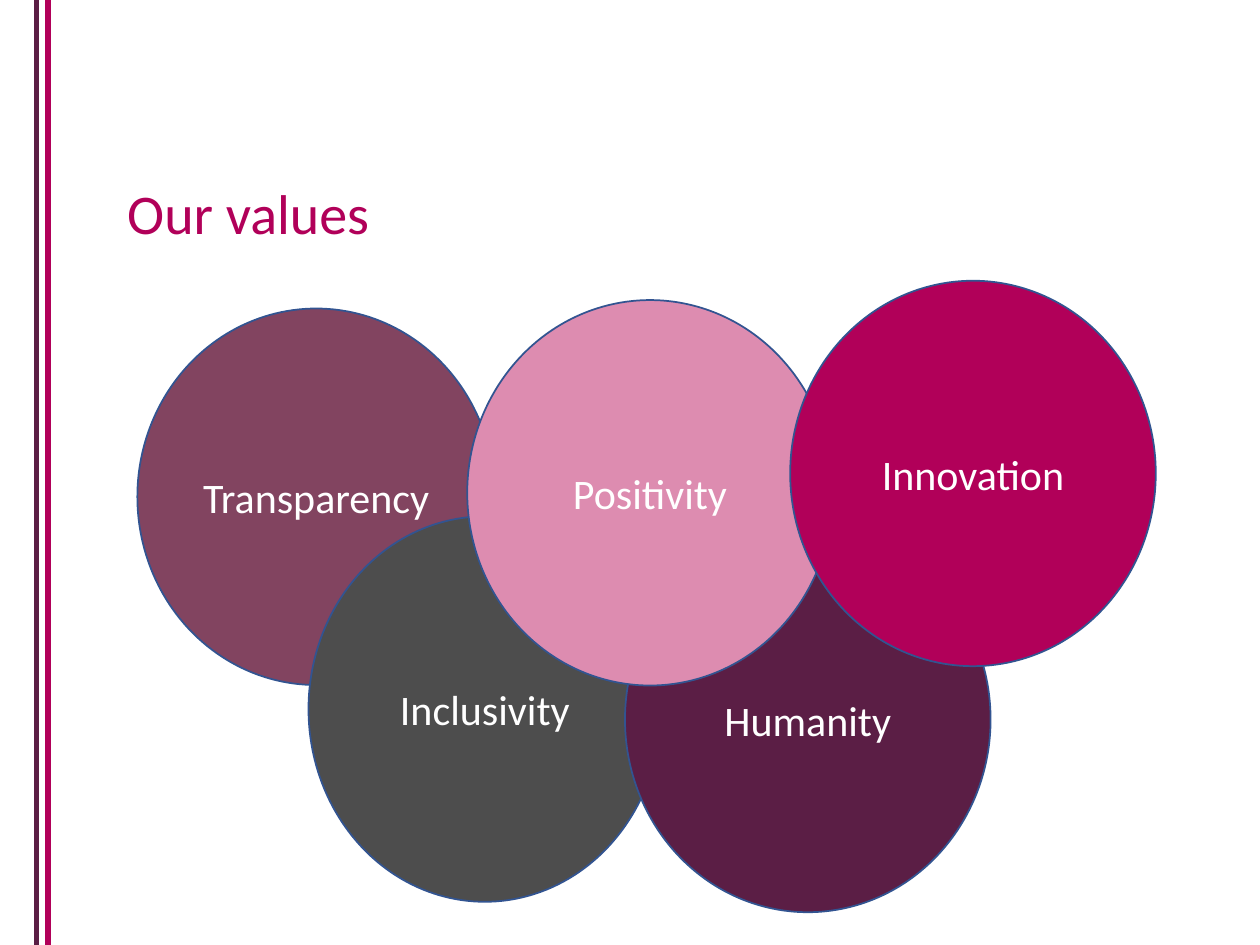
from dataclasses import dataclass

from lxml import etree
from pptx import Presentation
from pptx.dml.color import RGBColor
from pptx.enum.shapes import MSO_CONNECTOR, MSO_SHAPE
from pptx.enum.text import MSO_ANCHOR, MSO_AUTO_SIZE, PP_ALIGN
from pptx.oxml.ns import qn
from pptx.util import Cm, Pt

STRAIGHT = MSO_CONNECTOR.STRAIGHT
OVAL = MSO_SHAPE.OVAL
TOP, MIDDLE = MSO_ANCHOR.TOP, MSO_ANCHOR.MIDDLE
LEFT, CENTER = PP_ALIGN.LEFT, PP_ALIGN.CENTER
NO_AUTOFIT = MSO_AUTO_SIZE.NONE

WIDTH, HEIGHT = 25.4, 19.05
PLUM, MAGENTA, OUTLINE, WHITE = "5B1E45", "B10059", "325491", "FFFFFF"


@dataclass
class Stripe:
    x: float
    color: str


@dataclass
class Value:
    name: str
    left: float
    top: float
    fill: str
    width: float = 7.37
    height: float = 7.77


STRIPES = [Stripe(0.74, PLUM), Stripe(0.97, MAGENTA)]

# Back to front, lengths in centimetres
VALUES = [
    Value("Transparency", 2.77, 6.22, "824460", 7.21, 7.59),
    Value("Inclusivity", 6.22, 10.41, "4D4D4D", 7.11),
    Value("Humanity", 12.6, 10.62, PLUM),
    Value("Positivity", 9.42, 6.05, "DD8CB0"),
    Value("Innovation", 15.93, 5.66, MAGENTA),
]


def rgb(color: str) -> RGBColor:
    return RGBColor.from_string(color)


def write_text(tf, text: str, size: int, color: str, align, frame: dict) -> None:
    for name, value in frame.items():
        setattr(tf, name, value)
    p = tf.paragraphs[0]
    p.alignment = align
    r = p.add_run()
    r.text = text
    for name, value in {"name": "Calibri", "size": Pt(size)}.items():
        setattr(r.font, name, value)
    r.font.color.rgb = rgb(color)


def draw_stripe(shapes, stripe: Stripe) -> None:
    x = Cm(stripe.x)
    line = shapes.add_connector(STRAIGHT, x, 0, x, Cm(HEIGHT))
    line.line.color.rgb = rgb(stripe.color)
    line.line.width = Pt(3)
    etree.SubElement(line._element.spPr, qn("a:effectLst"))


def draw_value(shapes, value: Value) -> None:
    sp = shapes.add_shape(OVAL, Cm(value.left), Cm(value.top),
                          Cm(value.width), Cm(value.height))
    sp.shadow.inherit = False
    sp.fill.solid()
    sp.fill.fore_color.rgb = rgb(value.fill)
    sp.line.color.rgb = rgb(OUTLINE)
    sp.line.width = Pt(1)
    write_text(sp.text_frame, value.name, 24, WHITE, CENTER,
               {"vertical_anchor": MIDDLE, "word_wrap": False})


def main() -> None:
    prs = Presentation()
    prs.slide_width, prs.slide_height = Cm(WIDTH), Cm(HEIGHT)
    s = prs.slides.add_slide(prs.slide_layouts[5])

    # Title
    title = s.shapes.title
    box = {"left": 2.31, "top": 3.48, "width": 22.5, "height": 3.68}
    for name, length in box.items():
        setattr(title, name, Cm(length))
    write_text(title.text_frame, "Our values", 32, MAGENTA, LEFT,
               {"vertical_anchor": TOP, "word_wrap": True,
                "auto_size": NO_AUTOFIT})

    # Stripes down the left edge
    for stripe in STRIPES:
        draw_stripe(s.shapes, stripe)

    # Overlapping circles, kept together in one group
    group = s.shapes.add_group_shape()
    for value in VALUES:
        draw_value(group.shapes, value)

    prs.save("out.pptx")


if __name__ == "__main__":
    main()
